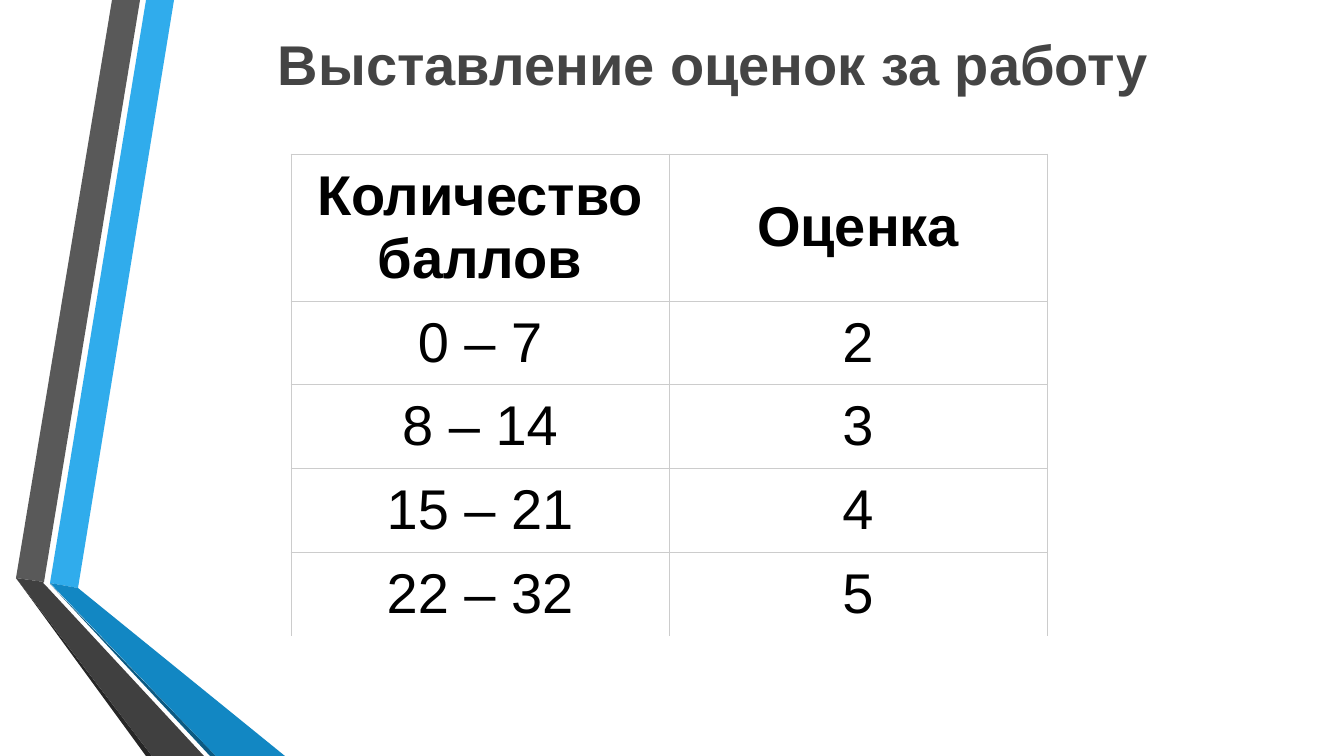
from dataclasses import dataclass

from lxml import etree
from pptx import Presentation, util as u
from pptx.dml.color import RGBColor
from pptx.enum import text as t
from pptx.oxml.ns import qn

PX = 914400 / 100.8


@dataclass(frozen=True)
class Theme:
    font: str = "Arial"
    size: int = 40
    title: str = "444444"
    ink: str = "000000"
    paper: str = "FFFFFF"
    rule: str = "CCCCCC"
    rule_pt: float = 0.75
    blue: str = "30ACEC"
    blue_mid: str = "1287C3"
    blue_dark: str = "0C5A82"
    gray: str = "595959"
    gray_mid: str = "404040"
    gray_dark: str = "262626"


THEME = Theme()

RIBBONS = [
    (THEME.blue, [(50, 583), (78, 588), (174, 0), (146, 0)]),
    (THEME.gray, [(140, 0), (112, 0), (16, 578), (44, 582)]),
    (THEME.gray_dark, [(16, 578), (146, 756), (152, 756)]),
    (THEME.blue_dark, [(50, 584), (210, 756), (216, 756)]),
    (THEME.blue_mid, [(50, 583), (216, 756), (285, 756), (78, 588)]),
    (THEME.gray_mid, [(204, 756), (48, 588), (43, 583), (44, 582),
                      (16, 578), (152, 756)]),
]

GRADES = [
    ("Количество баллов", "Оценка"),
    ("0 – 7", "2"),
    ("8 – 14", "3"),
    ("15 – 21", "4"),
    ("22 – 32", "5"),
]


def px(n):
    return u.Emu(round(n * PX))


def rgb(code):
    return RGBColor.from_string(code)


def style(para, color, bold):
    for run in para.runs:
        font = run.font
        font.name = THEME.font
        font.size = u.Pt(THEME.size)
        font.bold = bold
        font.color.rgb = rgb(color)


def add_ribbons(slide, left, top):
    for color, points in RIBBONS:
        pen = slide.shapes.build_freeform(*points[0], scale=PX)
        pen.add_line_segments(points[1:], close=True)
        shape = pen.convert_to_shape(px(left), px(top))
        shape.shadow.inherit = False
        shape.fill.solid()
        shape.fill.fore_color.rgb = rgb(color)
        shape.line.fill.background()


def add_title(slide, left, top, width, height, words):
    box = slide.shapes.add_textbox(*map(px, (left, top, width, height)))
    frame = box.text_frame
    frame.text = words
    frame.word_wrap = False
    frame.auto_size = t.MSO_AUTO_SIZE.SHAPE_TO_FIT_TEXT
    style(frame.paragraphs[0], THEME.title, True)


def rule_cell(cell, last):
    """Rule all sides of a cell, leaving the foot of the last row open."""
    props = cell._tc.get_or_add_tcPr()
    for side in "LRTB":
        line = etree.SubElement(props, qn(f"a:ln{side}"),
                                w=str(u.Pt(THEME.rule_pt)))
        if last and side == "B":
            etree.SubElement(line, qn("a:noFill"))
        else:
            fill = etree.SubElement(line, qn("a:solidFill"))
            etree.SubElement(fill, qn("a:srgbClr"), val=THEME.rule)


def fill_cell(cell, words, head, last):
    rule_cell(cell, last)
    cell.fill.solid()
    cell.fill.fore_color.rgb = rgb(THEME.paper)
    cell.margin_left = cell.margin_right = px(10)
    cell.margin_top = cell.margin_bottom = px(6)
    cell.vertical_anchor = t.MSO_ANCHOR.MIDDLE
    cell.text_frame.text = words
    para = cell.text_frame.paragraphs[0]
    para.alignment = t.PP_ALIGN.CENTER
    style(para, THEME.ink, head)


def add_grades(slide, left, top, width, height, head):
    """Place the table; rows below the head share the height left over."""
    count, cols = len(GRADES), len(GRADES[0])
    table = slide.shapes.add_table(
        count, cols, *map(px, (left, top, width, height))).table
    table.horz_banding = False
    for col in table.columns:
        col.width = px(width / cols)
    for r, line in enumerate(GRADES):
        table.rows[r].height = px(
            (height - head) / (count - 1) if r else head)
        for c, words in enumerate(line):
            fill_cell(table.cell(r, c), words, r == 0, r == count - 1)


def main():
    deck = Presentation()
    deck.slide_width, deck.slide_height = px(1344), px(756)
    slide = deck.slides.add_slide(deck.slide_layouts[6])
    slide.background.fill.solid()
    slide.background.fill.fore_color.rgb = rgb(THEME.paper)
    add_ribbons(slide, 0, 0)
    add_title(slide, 268, 25, 899, 78, "Выставление оценок за работу")
    add_grades(slide, 291, 154, 756, 482, head=147)
    deck.save("out.pptx")


if __name__ == "__main__":
    main()
